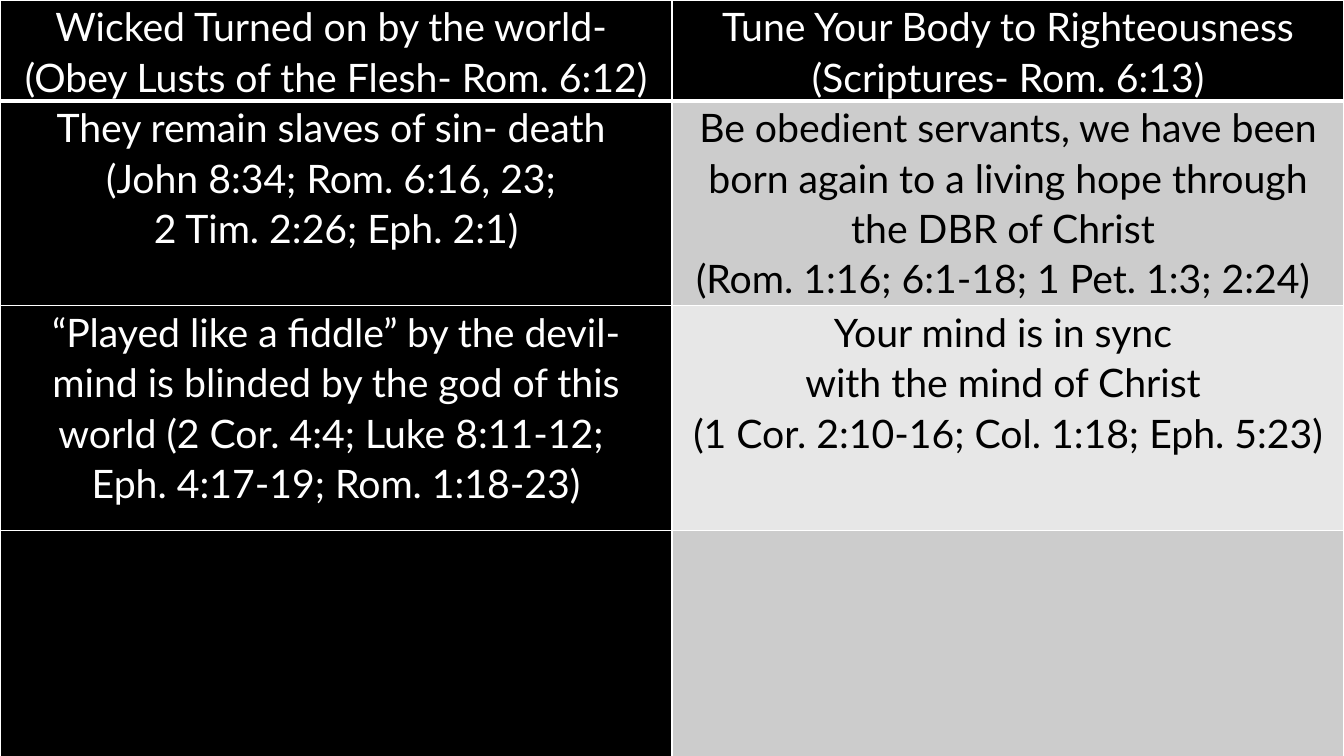
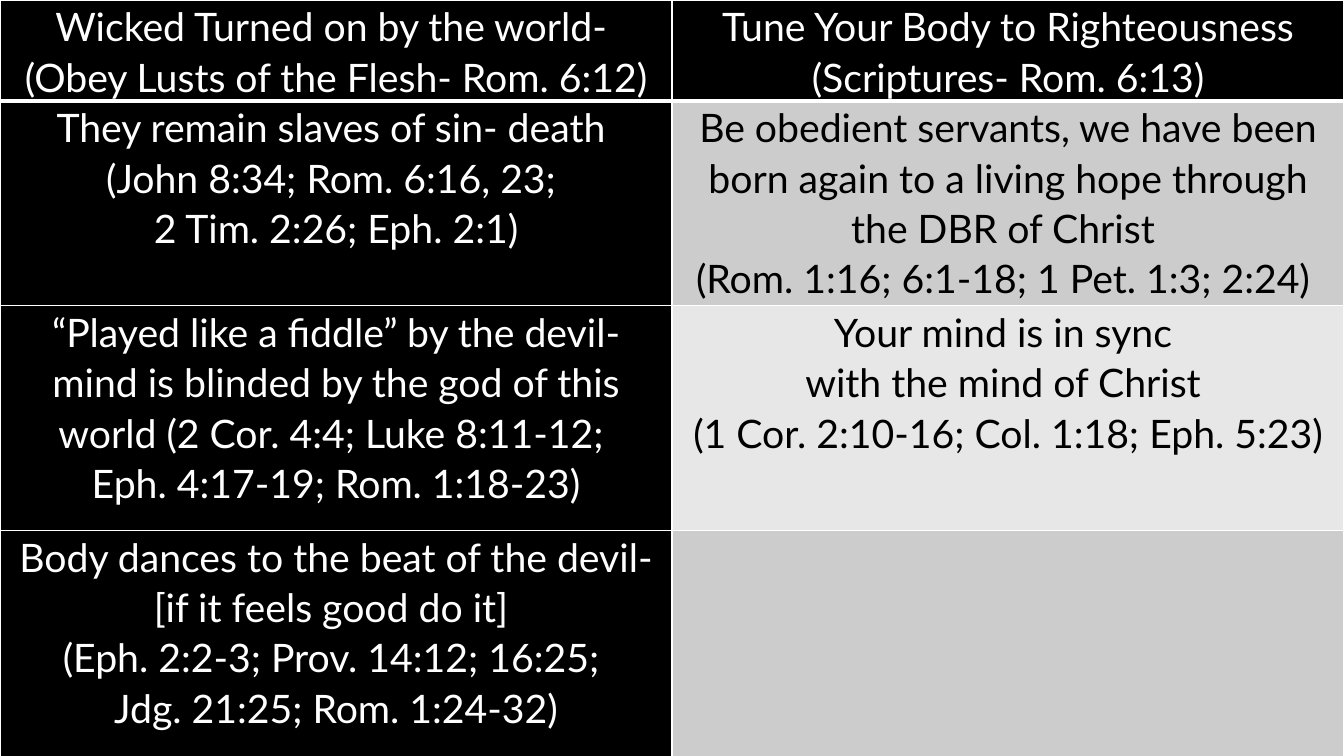
from dataclasses import dataclass

from lxml import etree
from pptx import Presentation
from pptx.dml.color import RGBColor
from pptx.enum import text
from pptx.oxml import ns
from pptx.slide import Slide
from pptx.table import _Cell
from pptx.util import Inches, Pt

BLACK = RGBColor(0x00, 0x00, 0x00)
WHITE = RGBColor(0xFF, 0xFF, 0xFF)
GRAY = RGBColor(0xCC, 0xCC, 0xCC)
LIGHT_GRAY = RGBColor(0xE7, 0xE7, 0xE7)

FONT = "Lato"
FONT_SIZE = Pt(28)
LINE_SPACING = 1.07
SIDE_MARGIN = Inches(0.07)
THIN = Pt(1)
THICK = Pt(3)

SLIDE_WIDTH = Inches(13.33)
SLIDE_HEIGHT = Inches(7.5)
BLANK_LAYOUT = 6


@dataclass(frozen=True)
class ContrastRow:
    """One row setting the wicked (left) against the righteous (right)."""

    height: float
    wicked: str
    righteous: str
    righteous_fill: RGBColor


HEADER = ContrastRow(
    0.99,
    "Wicked Turned on by the world- \n(Obey Lusts of the Flesh- Rom. 6:12)",
    "Tune Your Body to Righteousness (Scriptures- Rom. 6:13)",
    BLACK,
)
MASTERS = ContrastRow(
    2.03,
    "They remain slaves of sin- death \n(John 8:34; Rom. 6:16, 23; \n2 Tim. 2:26; Eph. 2:1)",
    "Be obedient servants, we have been born again to a living hope "
    "through the DBR of Christ \n(Rom. 1:16; 6:1-18; 1 Pet. 1:3; 2:24) ",
    GRAY,
)
MIND = ContrastRow(
    2.23,
    "“Played like a fiddle” by the devil- mind is blinded by the god of this "
    "world (2 Cor. 4:4; Luke 8:11-12; \nEph. 4:17-19; Rom. 1:18-23)",
    "Your mind is in sync \nwith the mind of Christ \n"
    "(1 Cor. 2:10-16; Col. 1:18; Eph. 5:23)",
    LIGHT_GRAY,
)
BODY_TEXT = (
    "Body dances to the beat of the devil- [if it feels good do it] \n"
    "(Eph. 2:2-3; Prov. 14:12; 16:25; \nJdg. 21:25; Rom. 1:24-32)"
)
BODY_TEXT_BY_SLIDE = ("", BODY_TEXT)


def set_borders(cell: _Cell, top: int, bottom: int) -> None:
    """Draw white borders; the schema wants them ahead of the cell fill."""
    properties = cell._tc.get_or_add_tcPr()
    widths = {"lnL": THIN, "lnR": THIN, "lnT": top, "lnB": bottom}
    for index, (side, width) in enumerate(widths.items()):
        line = etree.Element(ns.qn(f"a:{side}"), w=str(int(width)))
        fill = etree.SubElement(line, ns.qn("a:solidFill"))
        etree.SubElement(fill, ns.qn("a:srgbClr"), val=str(WHITE))
        properties.insert(index, line)


def fill_cell(cell: _Cell, content: str, color: RGBColor) -> None:
    cell.fill.solid()
    cell.fill.fore_color.rgb = color
    cell.margin_left = cell.margin_right = SIDE_MARGIN
    cell.margin_top = cell.margin_bottom = 0
    cell.text_frame.text = content
    for paragraph in cell.text_frame.paragraphs:
        paragraph.alignment = text.PP_ALIGN.CENTER
        paragraph.line_spacing = LINE_SPACING
        for run in paragraph.runs:
            run.font.name = FONT
            run.font.size = FONT_SIZE
            run.font.bold = False
            run.font.color.rgb = WHITE if color == BLACK else BLACK


def add_contrast_table(slide: Slide, rows: list[ContrastRow]) -> None:
    height = Inches(sum(row.height for row in rows))
    table = slide.shapes.add_table(len(rows), 2, 0, 0, SLIDE_WIDTH, height).table
    table.first_row = table.horz_banding = False
    for index, row in enumerate(rows):
        table.rows[index].height = Inches(row.height)
        top = THICK if index == 1 else THIN
        bottom = THICK if index == 0 else THIN
        sides = ((row.wicked, BLACK), (row.righteous, row.righteous_fill))
        for column, (content, color) in enumerate(sides):
            cell = table.cell(index, column)
            fill_cell(cell, content, color)
            set_borders(cell, top, bottom)


def main() -> None:
    presentation = Presentation()
    presentation.slide_width = SLIDE_WIDTH
    presentation.slide_height = SLIDE_HEIGHT
    background = presentation.slide_master.background.fill
    background.solid()
    background.fore_color.rgb = BLACK
    for body_text in BODY_TEXT_BY_SLIDE:
        slide = presentation.slides.add_slide(presentation.slide_layouts[BLANK_LAYOUT])
        body = ContrastRow(2.26, body_text, "", GRAY)
        add_contrast_table(slide, [HEADER, MASTERS, MIND, body])
    presentation.save("out.pptx")


if __name__ == "__main__":
    main()
